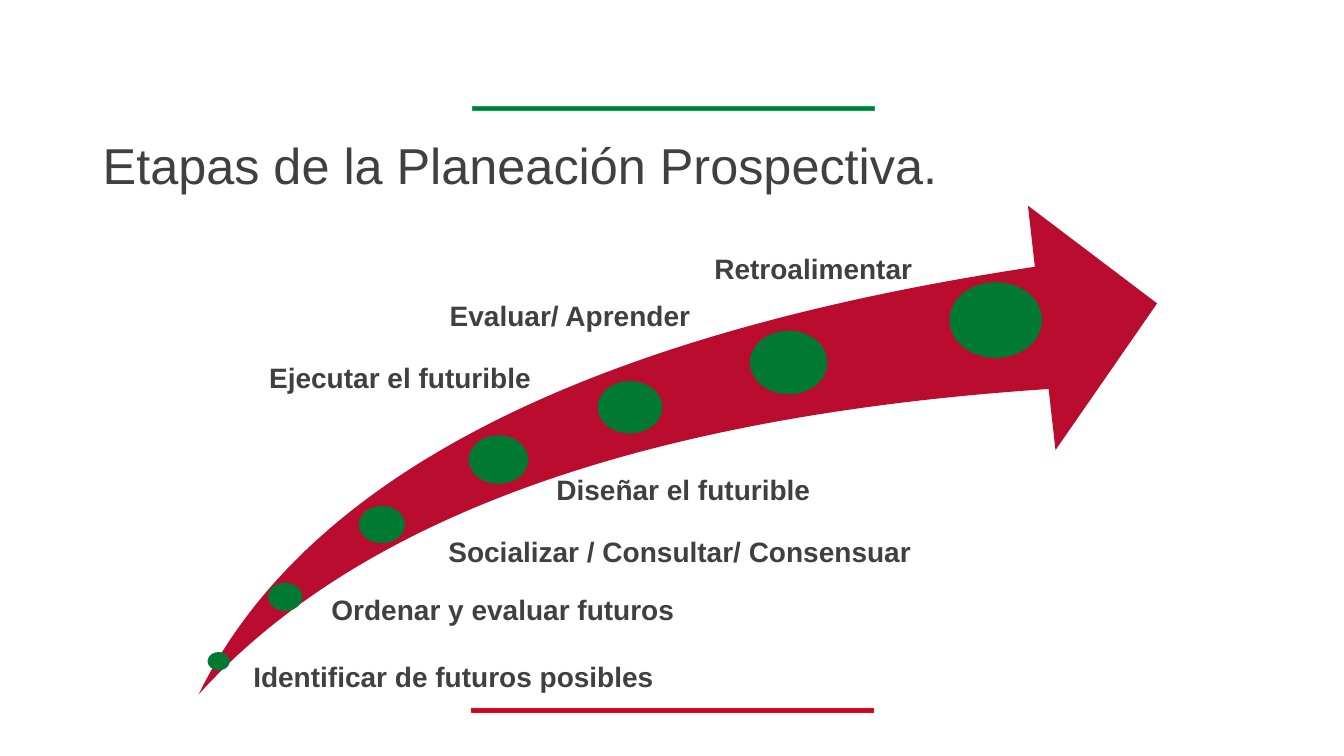
from pptx import Presentation
from pptx.dml.color import RGBColor
from pptx.enum.shapes import MSO_SHAPE
from pptx.enum.text import MSO_ANCHOR, MSO_AUTO_SIZE, PP_ALIGN
from pptx.util import Pt

RECTANGLE, ELLIPSE = MSO_SHAPE.RECTANGLE, MSO_SHAPE.OVAL
SWOOSH = MSO_SHAPE.SWOOSH_ARROW
LEFT, CENTER = PP_ALIGN.LEFT, PP_ALIGN.CENTER
MIDDLE, GROW = MSO_ANCHOR.MIDDLE, MSO_AUTO_SIZE.SHAPE_TO_FIT_TEXT
TITLE_ONLY = 5

COLORS = {
    "red": "BA0C2F", "green": "007A33", "text": "404040",
    "red_edge": "FF0000", "green_edge": "00B050",
}

# Left, top, width, height of each milestone, from start to tip
MILESTONES = [
    (148.3, 465.8, 15.8, 13),
    (191.5, 416.2, 24.5, 20.2),
    (256.3, 361.4, 33.1, 26.6),
    (334.8, 311, 42.5, 34.6),
    (427, 272.2, 46.1, 37.4),
    (535.7, 236.2, 55.4, 45.4),
    (678.2, 201.6, 66.2, 54),
]

# Text, left, top, width, alignment of each stage
STAGES = [
    ("Identificar de futuros posibles", 118.1, 467.3, 411.8, CENTER),
    ("Ordenar y evaluar futuros", 229.7, 419.8, 378.7, LEFT),
    ("Socializar / Consultar/ Consensuar", 313.2, 378, 441.4, LEFT),
    ("Diseñar el futurible", 360.7, 334.1, 254.9, CENTER),
    ("Ejecutar el futurible", 138.2, 254.2, 295.2, CENTER),
    ("Evaluar/ Aprender", 258.5, 209.5, 297.4, CENTER),
    ("Retroalimentar", 458.6, 176.4, 244.8, CENTER),
]


def color(name):
    return RGBColor.from_string(COLORS[name])


def add_figure(page, kind, bounds, fill, edge=None):
    figure = page.shapes.add_shape(kind, *map(Pt, bounds))
    figure.shadow.inherit = False
    figure.fill.solid()
    figure.fill.fore_color.rgb = color(fill)
    if edge:
        figure.line.color.rgb = color(edge)
        figure.line.width = Pt(0.5)
    else:
        figure.line.fill.background()
    return figure


def write(box, text, size, bold=False, align=LEFT, spacing=1.0):
    box.text_frame.word_wrap = True
    para = box.text_frame.paragraphs[0]
    para.alignment = align
    para.line_spacing = spacing
    span = para.add_run()
    span.text = text
    span.font.name = "Arial"
    span.font.size = Pt(size)
    span.font.bold = bold
    span.font.color.rgb = color("text")


def add_title(page, text):
    title = page.shapes.title
    title.left, title.top = Pt(66.2), Pt(67.7)
    title.width, title.height = Pt(828), Pt(104.4)
    title.text_frame.vertical_anchor = MIDDLE
    write(title, text, 36, spacing=0.9)


def add_stage(page, text, left, top, width, align):
    box = page.shapes.add_textbox(Pt(left), Pt(top), Pt(width), Pt(31.7))
    write(box, text, 20, bold=True, align=align)
    box.text_frame.auto_size = GROW


def main():
    deck = Presentation()
    deck.slide_width, deck.slide_height = Pt(960), Pt(540)
    page = deck.slides.add_slide(deck.slide_layouts[TITLE_ONLY])

    # Rules and title
    add_figure(page, RECTANGLE, (337, 506.2, 286.6, 2.9), "red", "red_edge")
    add_figure(page, RECTANGLE, (337.7, 76.3, 286.6, 2.9), "green", "green_edge")
    add_title(page, "Etapas de la Planeación Prospectiva.")

    # Rising arrow with its milestones
    arrow = add_figure(page, SWOOSH, (141.8, 146.9, 684.7, 349.2), "red")
    arrow.adjustments[0] = arrow.adjustments[1] = 0.25
    for bounds in MILESTONES:
        add_figure(page, ELLIPSE, bounds, "green")

    # Stage names
    for stage in STAGES:
        add_stage(page, *stage)

    deck.save("out.pptx")


if __name__ == "__main__":
    main()
